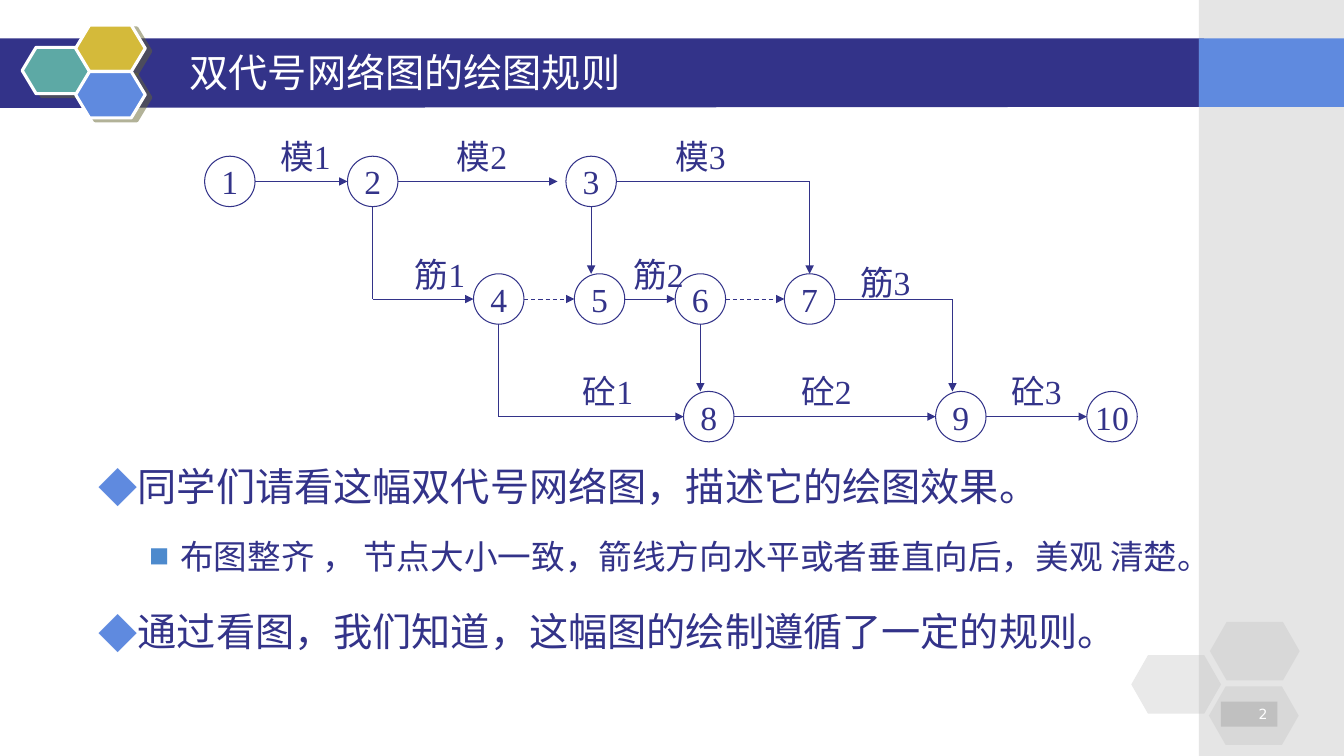
from lxml import etree
from pptx import Presentation
from pptx import util as u
from pptx.dml.color import RGBColor
from pptx.enum import dml, shapes, text
from pptx.oxml.ns import qn

W, H = 13.33, 7.5
HUE = dict(navy="333389", gray="C0C0C0", blue="5F8ADF", teal="5DA9A5",
           gold="D4BA3A", mark="4D8ACD", shade="666633", white="FFFFFF")
SANS, SERIF, NUM = "Noto Sans CJK SC", "Times New Roman", "DejaVu Sans"

TITLE = "双代号网络图的绘图规则"
# text, size, indent, hanging, bullet, bullet colour, bullet percent
NOTES = [
    ("同学们请看这幅双代号网络图，描述它的绘图效果。", 28, .38, .38, "◆", "blue", 100),
    ("布图整齐 ， 节点大小一致，箭线方向水平或者垂直向后，美观 清楚。",
     24, .81, .31, "■", "mark", 60),
    ("通过看图，我们知道，这幅图的绘制遵循了一定的规则。", 28, .38, .38, "◆", "blue", 100),
]

# The network lies on a grid of twelfths of an inch, starting at node 1.
X0, Y0, STEP, R = 2.28, 1.8, 1 / 12, 3
ROWS = [0, 14, 28]
NODES = [(1, 0, 0), (2, 17, 0), (3, 43, 0), (4, 32, 1), (5, 44, 1), (6, 56, 1),
         (7, 69, 1), (8, 57, 2), (9, 87, 2), (10, 105, 2)]
LABELS = [("模1", 9, -3), ("模2", 30, -3), ("模3", 56, -3),
          ("筋1", 25, 11), ("筋2", 51, 11), ("筋3", 78, 12),
          ("砼1", 45, 25), ("砼2", 71, 25), ("砼3", 96, 25)]
LINES = {
    "arrow": [(3, 0, 14, 0), (20, 0, 39, 0), (17, 14, 29, 14), (47, 14, 53, 14),
              (43, 3, 43, 11), (69, 0, 69, 11), (32, 28, 54, 28), (60, 28, 84, 28),
              (90, 28, 102, 28), (86, 14, 86, 25), (56, 17, 56, 25)],
    "dash": [(35, 14, 41, 14), (59, 14, 66, 14)],
    "plain": [(46, 0, 69, 0), (72, 14, 86, 14), (17, 3, 17, 14), (32, 17, 32, 28)],
}
BADGE = [(.22, .47, "teal"), (.75, .25, "gold"), (.75, .71, "blue")]
CELLS = [(11.22, 6.5), (12, 6.17), (11.99, 6.81)]

deck = Presentation()
deck.slide_width, deck.slide_height = u.Inches(W), u.Inches(H)
slide = deck.slides.add_slide(deck.slide_layouts[5])
kind = shapes.MSO_SHAPE


def rgb(hue):
    return RGBColor.from_string(HUE[hue])


def sub(node, tag, **attrs):
    return etree.SubElement(node, qn(tag), {k: str(v) for k, v in attrs.items()})


def paint(shape, fill=None, alpha=None, line=None, width=.75):
    shape.shadow.inherit = False
    if fill:
        shape.fill.solid()
        shape.fill.fore_color.rgb = rgb(fill)
        if alpha:
            tone = shape._element.spPr.find(".//" + qn("a:srgbClr"))
            sub(tone, "a:alpha", val=alpha * 1000)
    else:
        shape.fill.background()
    if line:
        shape.line.color.rgb = rgb(line)
        shape.line.width = u.Pt(width)
    else:
        shape.line.fill.background()
    return shape


def add(form, x, y, w, h, **look):
    box = slide.shapes.add_shape(form, *map(u.Inches, (x, y, w, h)))
    return paint(box, **look)


def frame(shape, wrap=False, anchor=text.MSO_ANCHOR.MIDDLE):
    body = shape.text_frame
    body.word_wrap, body.vertical_anchor = wrap, anchor
    return body


def write(para, words, size, font, hue="navy", align=None):
    para.alignment = align
    run = para.add_run()
    run.text = words
    run.font.size, run.font.name = u.Pt(size), font
    run.font.color.rgb = rgb(hue)
    sub(run._r.get_or_add_rPr(), "a:ea", typeface=SANS)


def shade(shape):
    """Give a hard shadow, cast right and a little down."""
    cast = sub(shape._element.spPr.find(qn("a:effectLst")), "a:outerShdw",
               blurRad=0, dist=u.Pt(4.5), dir=27 * 60000, algn="ctr", rotWithShape=0)
    sub(sub(cast, "a:srgbClr", val=HUE["shade"]), "a:alpha", val=50000)


def spot(col, row):
    return X0 + col * STEP, Y0 + row * STEP


def link(style, ends):
    a, b = spot(*ends[:2]), spot(*ends[2:])
    wire = slide.shapes.add_connector(shapes.MSO_CONNECTOR.STRAIGHT,
                                      *map(u.Inches, a + b))
    wire.line.color.rgb, wire.line.width = rgb("navy"), u.Pt(.75)
    if style == "dash":
        wire.line.dash_style = dml.MSO_LINE.DASH
    if style != "plain":
        sub(wire.line._get_or_add_ln(), "a:tailEnd", type="triangle")
    sub(wire._element.spPr, "a:effectLst")


def banner():
    side, top, end = 11.89, .38, 1.06
    pen = slide.shapes.build_freeform(0, u.Inches(top))
    pen.add_line_segments([(u.Inches(x), u.Inches(y)) for x, y in
                           [(11.94, top), (11.93, end), (0, end + .01)]])
    paint(pen.convert_to_shape(), "navy")
    add(kind.RECTANGLE, side, 0, W - side, H, fill="gray", alpha=40)
    add(kind.RECTANGLE, side, top, W - side, end - top, fill="blue")
    for x, y, hue in BADGE:
        hexa = add(kind.HEXAGON, x, y, .69, .46, fill=hue, line="white", width=2.25)
        hexa.adjustments[0] = .3
        shade(hexa)
    for x, y in CELLS:
        add(kind.HEXAGON, x, y, .89, .58, fill="gray", alpha=35).adjustments[0] = .286
    page = add(kind.RECTANGLE, 12.11, 6.96, .56, .25, fill="gray")
    write(frame(page).paragraphs[0], "2", 10, NUM, "white", text.PP_ALIGN.RIGHT)


def heading():
    title = slide.shapes.title
    title.left, title.top, title.width, title.height = map(
        u.Inches, (1.78, .42, 9.67, .58))
    write(frame(title, True).paragraphs[0], TITLE, 28, SANS, "white",
          text.PP_ALIGN.LEFT)
    slide.shapes._spTree.append(title._element)


def network():
    mid = text.PP_ALIGN.CENTER
    for name, col, row in NODES:
        x, y = spot(col - R, ROWS[row] - R)
        node = add(kind.OVAL, x, y, 2 * R * STEP, 2 * R * STEP, line="navy")
        write(frame(node).paragraphs[0], str(name), 24, SERIF, align=mid)
    for style, group in LINES.items():
        for ends in group:
            link(style, ends)
    for name, col, row in LABELS:
        x, y = spot(col - 5, row - 2)
        box = slide.shapes.add_textbox(*map(u.Inches, (x, y, 10 * STEP, 4 * STEP)))
        write(frame(box).paragraphs[0], name, 24, SERIF, align=mid)


def notes():
    box = slide.shapes.add_textbox(*map(u.Inches, (.88, 4.3, 11.42, 1.26)))
    body = frame(box, True, text.MSO_ANCHOR.TOP)
    for i, (words, size, left, hang, dot, hue, share) in enumerate(NOTES):
        para = body.paragraphs[0] if i == 0 else body.add_paragraph()
        para.line_spacing, para.space_before = 1.5, u.Pt(size * .2)
        para.level = int(share < 100)
        prop = para._p.get_or_add_pPr()
        prop.set("marL", str(u.Inches(left)))
        prop.set("indent", str(-u.Inches(hang)))
        sub(sub(prop, "a:buClr"), "a:srgbClr", val=HUE[hue])
        sub(prop, "a:buSzPct", val=share * 1000)
        sub(prop, "a:buFont", typeface=SANS)
        sub(prop, "a:buChar", char=dot)
        write(para, words, size, SANS)


banner()
heading()
network()
notes()
deck.save("out.pptx")
